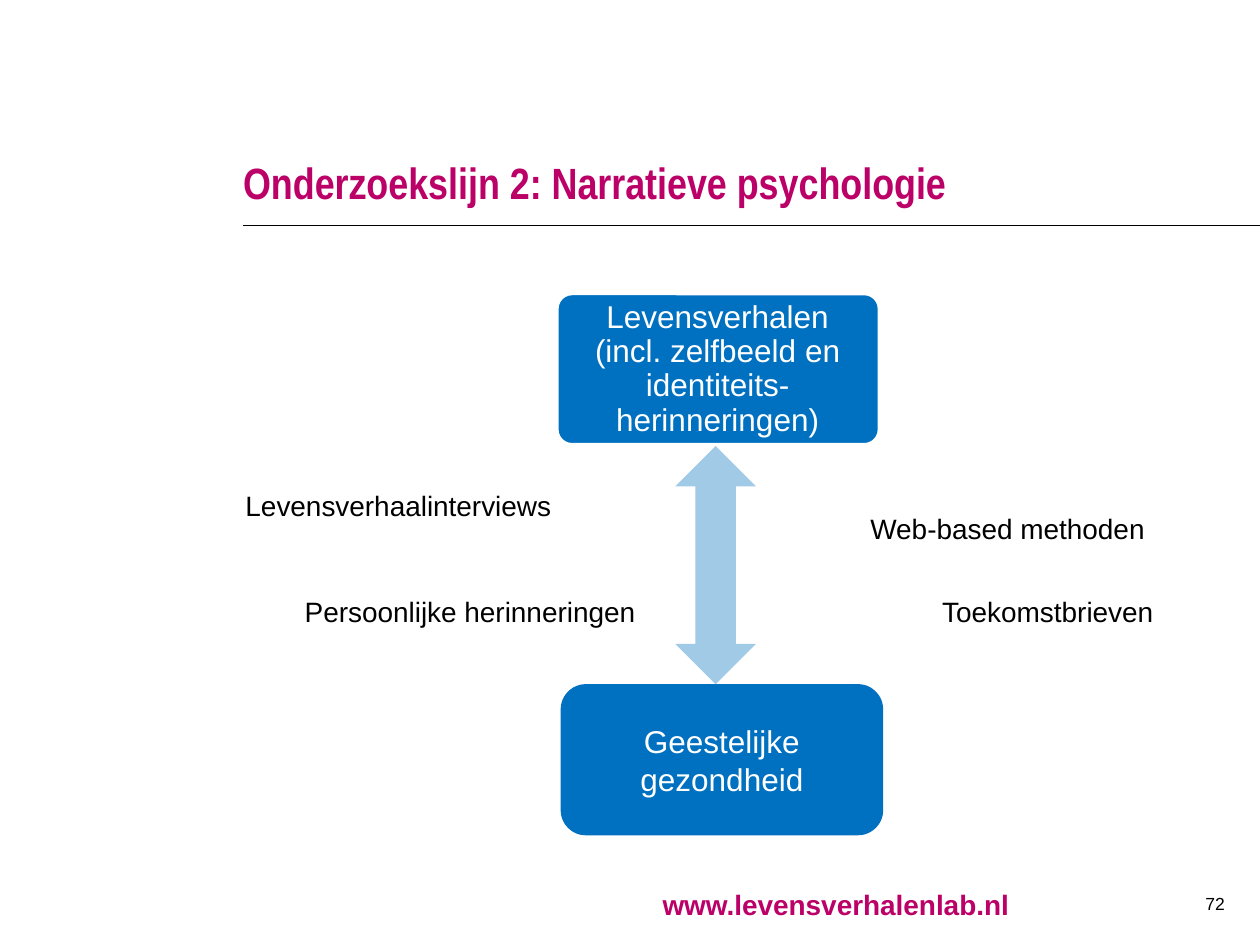
from lxml import etree
from pptx import Presentation
from pptx import util as u
from pptx.dml.color import RGBColor
from pptx.enum import shapes, text
from pptx.oxml import ns

prs = Presentation()
prs.slide_width, prs.slide_height = u.Inches(10), u.Inches(7.5)
s = prs.slides.add_slide(prs.slide_layouts[6])
COL, ROW = prs.slide_width / 100, prs.slide_height / 75
MAGENTA, BLUE, BLACK, WHITE = "BB0067", "0070C0", "000000", "FFFFFF"


def rgb(value):
    return RGBColor.from_string(value)


def write(content, at, sp=None, size=16, color=BLACK, bold=False, font="Arial",
          align="LEFT", anchor="TOP", spacing=None, insets=(0.1, 0.05, 0.1, 0.05)):
    if sp is None:
        x, y, w, h = at
        sp = s.shapes.add_textbox(int(x * COL), int(y * ROW), int(w * COL), int(h * ROW))
    tf = sp.text_frame
    tf.word_wrap = True
    tf.vertical_anchor = getattr(text.MSO_ANCHOR, anchor)
    tf.margin_left, tf.margin_top, tf.margin_right, tf.margin_bottom = map(u.Inches, insets)
    p = tf.paragraphs[0]
    p.alignment = getattr(text.PP_ALIGN, align)
    p.line_spacing = spacing
    r = p.add_run()
    r.text = content
    r.font.size, r.font.bold, r.font.name = u.Pt(size), bold, font
    r.font.color.rgb = rgb(color)


rule = s.shapes.add_connector(shapes.MSO_CONNECTOR.STRAIGHT, int(19.3 * COL),
                              int(17.9 * ROW), int(100 * COL), int(17.9 * ROW))
rule.line.color.rgb = rgb(BLACK)
rule.line.width = u.Pt(1)
etree.SubElement(rule._element.spPr, ns.qn("a:effectLst"))

write("Onderzoekslijn 2: Narratieve psychologie", (19.3, 4, 77.9, 12.5), size=25,
      color=MAGENTA, bold=True, font="Arial Narrow", anchor="BOTTOM",
      insets=(0, 0.05, 0.1, 0))

blocks = {}
for name, kind, x, y, w, h in [
    ("stories", "ROUNDED_RECTANGLE", 44.2, 23.3, 25.6, 12),
    ("health", "ROUNDED_RECTANGLE", 44.5, 54.3, 25.6, 12),
    ("arrow", "UP_DOWN_ARROW", 53.6, 35.4, 6.4, 18.9),
]:
    sp = s.shapes.add_shape(getattr(shapes.MSO_SHAPE, kind), int(x * COL), int(y * ROW),
                            int(w * COL), int(h * ROW))
    sp.shadow.inherit = False
    sp.fill.solid()
    sp.fill.fore_color.rgb = rgb(BLUE)
    sp.line.fill.background()
    blocks[name] = sp

blocks["stories"].adjustments[0] = 0.1
blocks["stories"].line.color.rgb = rgb(WHITE)
blocks["stories"].line.width = u.Pt(2)
tint = blocks["arrow"]._element.spPr.find(ns.qn("a:solidFill"))[0]
etree.SubElement(tint, ns.qn("a:alpha"), val="37000")

write("Levensverhalen (incl. zelfbeeld en identiteits-herinneringen)",
      (44.5, 23.7, 24.9, 11.3), size=18, color=WHITE, align="CENTER", anchor="MIDDLE",
      spacing=0.9, insets=(0.07,) * 4)
write("Geestelijke gezondheid", None, sp=blocks["health"], size=18, color=WHITE,
      align="CENTER", anchor="MIDDLE")

for method, x, y, w in [
    ("Levensverhaalinterviews", 18.5, 38.3, 28.4),
    ("Persoonlijke herinneringen", 23.2, 46.7, 28.3),
    ("Web-based methoden", 68.1, 40.1, 26),
    ("Toekomstbrieven", 73.8, 46.7, 28.4),
]:
    write(method, (x, y, w, 3.7))

write("www.levensverhalenlab.nl", (51.6, 69.3, 44.1, 4), color=MAGENTA, bold=True,
      spacing=u.Pt(24))
write("72", (93.1, 70, 4.1, 5), size=10, align="RIGHT", spacing=u.Pt(15),
      insets=(0.1, 0.05, 0, 0.05))

prs.save("out.pptx")
